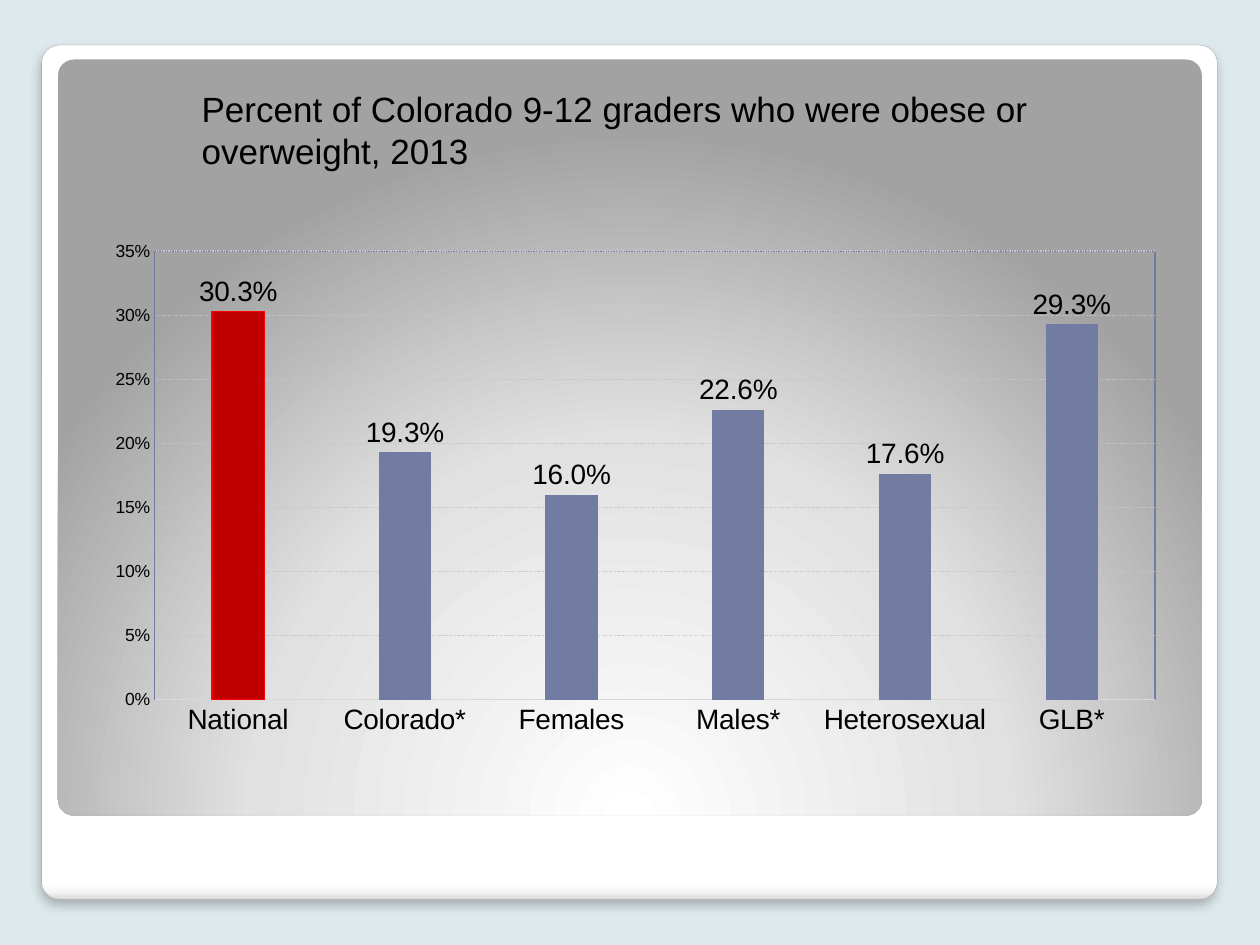
"""Builds a slide with a column chart of student weight in Colorado."""
import lxml.etree
import pptx
import pptx.chart.data
import pptx.dml.color
import pptx.enum.chart
import pptx.enum.dml
import pptx.enum.shapes
import pptx.enum.text
import pptx.oxml
import pptx.oxml.ns
import pptx.util

COLORS = {
    "background": "DDE9EC", "white": "FFFFFF", "edge": "A4A4A4", "black": "000000",
    "bar": "727CA3", "highlight": "C00000", "outline": "FF0000",
    "axis": "D9D9D9", "grid": "C0C4D6",
}
FRAME_STOPS = [(0, "FFFFFF"), (98, "FFFFFF"), (99, "F7F7F7"), (100, "DADADA")]
PANEL_STOPS = [(0, "FFFFFF"), (55, "E1E1E1"), (100, "A2A2A2")]
LINEAR = '<a:lin ang="5400000" scaled="0"/>'
RADIAL = ('<a:path path="circle"><a:fillToRect l="50000" t="175000" '
          'r="50000" b="-75000"/></a:path>')
RATES = {"National": 0.303, "Colorado*": 0.193, "Females": 0.16,
         "Males*": 0.226, "Heterosexual": 0.176, "GLB*": 0.293}
NS = pptx.oxml.ns.nsdecls("a", "c")


def rgb(name):
    return pptx.dml.color.RGBColor.from_string(COLORS[name])


def set_font(font, size, name="Arial", color="black"):
    font.size, font.name, font.bold = pptx.util.Pt(size), name, False
    font.color.rgb = rgb(color)


def set_line(line, color, width):
    line.color.rgb = rgb(color)
    line.width = pptx.util.Pt(width)


def write_text(tf, text, *, size, align=pptx.enum.text.PP_ALIGN.LEFT, **font):
    p = tf.paragraphs[0]
    p.alignment = align
    r = p.add_run()
    r.text = text
    set_font(r.font, size, **font)


class SlideBuilder:
    def __init__(self, prs):
        self.s = prs.slides.add_slide(prs.slide_layouts[5])
        fill = self.s.background.fill
        fill.solid()
        fill.fore_color.rgb = rgb("background")

    def panel(self, box, stops, direction, edge=None, shadow=False):
        sp = self.s.shapes.add_shape(
            pptx.enum.shapes.MSO_SHAPE.ROUNDED_RECTANGLE, *map(pptx.util.Cm, box))
        sp.adjustments[0] = 0.021
        sp.shadow.inherit = False
        if edge:
            set_line(sp.line, edge, 0.16)
        else:
            sp.line.fill.background()
        sp.fill.background()
        props = sp._element.spPr
        gs = "".join(f'<a:gs pos="{pos * 1000}"><a:srgbClr val="{color}"/></a:gs>'
                     for pos, color in stops)
        gradient = pptx.oxml.parse_xml(
            f'<a:gradFill {NS} rotWithShape="1"><a:gsLst>{gs}</a:gsLst>{direction}</a:gradFill>')
        props.replace(props.find(pptx.oxml.ns.qn("a:noFill")), gradient)
        if shadow:
            props.find(pptx.oxml.ns.qn("a:effectLst")).append(pptx.oxml.parse_xml(
                f'<a:outerShdw {NS} blurRad="76200" dist="50800" dir="5400000" rotWithShape="0">'
                f'<a:srgbClr val="{COLORS["black"]}"><a:alpha val="25000"/></a:srgbClr>'
                '</a:outerShdw>'))

    def title(self, text, box):
        sp = self.s.shapes.title
        sp.left, sp.top, sp.width, sp.height = map(pptx.util.Cm, box)
        tf = sp.text_frame
        tf.word_wrap = True
        tf.auto_size = pptx.enum.text.MSO_AUTO_SIZE.SHAPE_TO_FIT_TEXT
        tf.vertical_anchor = pptx.enum.text.MSO_ANCHOR.TOP
        write_text(tf, text, size=20)
        self.s.shapes._spTree.append(sp._element)

    def column_chart(self, rates, box):
        data = pptx.chart.data.CategoryChartData(number_format="0.0%")
        data.categories = list(rates)
        data.add_series("Series 1", list(rates.values()))
        chart = self.s.shapes.add_chart(
            pptx.enum.chart.XL_CHART_TYPE.COLUMN_CLUSTERED,
            *map(pptx.util.Cm, box), data).chart
        set_font(chart.font, 10, "DejaVu Sans")
        chart.has_legend = chart.has_title = False
        self.style_axes(chart)
        self.style_bars(chart.plots[0])
        self.style_plot_area(chart)

    def style_axes(self, chart):
        no_tick = pptx.enum.chart.XL_TICK_MARK.NONE
        for axis, size in ((chart.category_axis, 16), (chart.value_axis, 10)):
            axis.major_tick_mark = axis.minor_tick_mark = no_tick
            set_font(axis.tick_labels.font, size)
        set_line(chart.category_axis.format.line, "axis", 0.75)
        values = chart.value_axis
        values.minimum_scale, values.maximum_scale, values.major_unit = 0, 0.35, 0.05
        values.tick_labels.number_format = "0%"
        values.tick_labels.number_format_is_linked = False
        values.format.line.fill.background()
        grid = values.major_gridlines.format.line
        set_line(grid, "grid", 0.75)
        grid.dash_style = pptx.enum.dml.MSO_LINE.ROUND_DOT

    def style_bars(self, plot):
        plot.gap_width, plot.overlap, plot.vary_by_categories = 219, -27, False
        series = plot.series[0]
        first = series.points[0].format
        for part, color in ((series.format, "bar"), (first, "highlight")):
            part.fill.solid()
            part.fill.fore_color.rgb = rgb(color)
        set_line(first.line, "outline", 0.75)
        labels = series.data_labels
        labels.show_value = True
        labels.number_format, labels.number_format_is_linked = "0.0%", False
        labels.position = pptx.enum.chart.XL_LABEL_POSITION.OUTSIDE_END
        set_font(labels.font, 16)

    def style_plot_area(self, chart):
        area = chart._chartSpace.chart.plotArea
        for old in area.findall(pptx.oxml.ns.qn("c:layout")):
            area.remove(old)
        modes = '<c:xMode val="edge"/><c:yMode val="edge"/>'
        area.insert(0, pptx.oxml.parse_xml(
            f'<c:layout {NS}><c:manualLayout><c:layoutTarget val="inner"/>{modes}'
            '<c:x val="0.056"/><c:y val="0.04"/><c:w val="0.925"/><c:h val="0.873"/>'
            '</c:manualLayout></c:layout>'))
        area.append(pptx.oxml.parse_xml(
            f'<c:spPr {NS}><a:noFill/><a:ln w="9525"><a:solidFill>'
            f'<a:srgbClr val="{COLORS["bar"]}"/></a:solidFill></a:ln></c:spPr>'))


def main():
    prs = pptx.Presentation()
    prs.slide_width, prs.slide_height = pptx.util.Cm(25.4), pptx.util.Cm(19.05)
    slide = SlideBuilder(prs)
    slide.panel((0.84, 0.91, 23.7, 17.22), FRAME_STOPS, LINEAR, edge="edge", shadow=True)
    slide.panel((1.17, 1.2, 23.06, 15.24), PANEL_STOPS, RADIAL)
    slide.column_chart(RATES, (1.9, 4.65, 21.8, 10.36))
    slide.title("Percent of Colorado 9-12 graders who were obese or overweight, 2013",
                (3.81, 1.63, 17.58, 1.96))
    prs.save("out.pptx")


if __name__ == "__main__":
    main()
